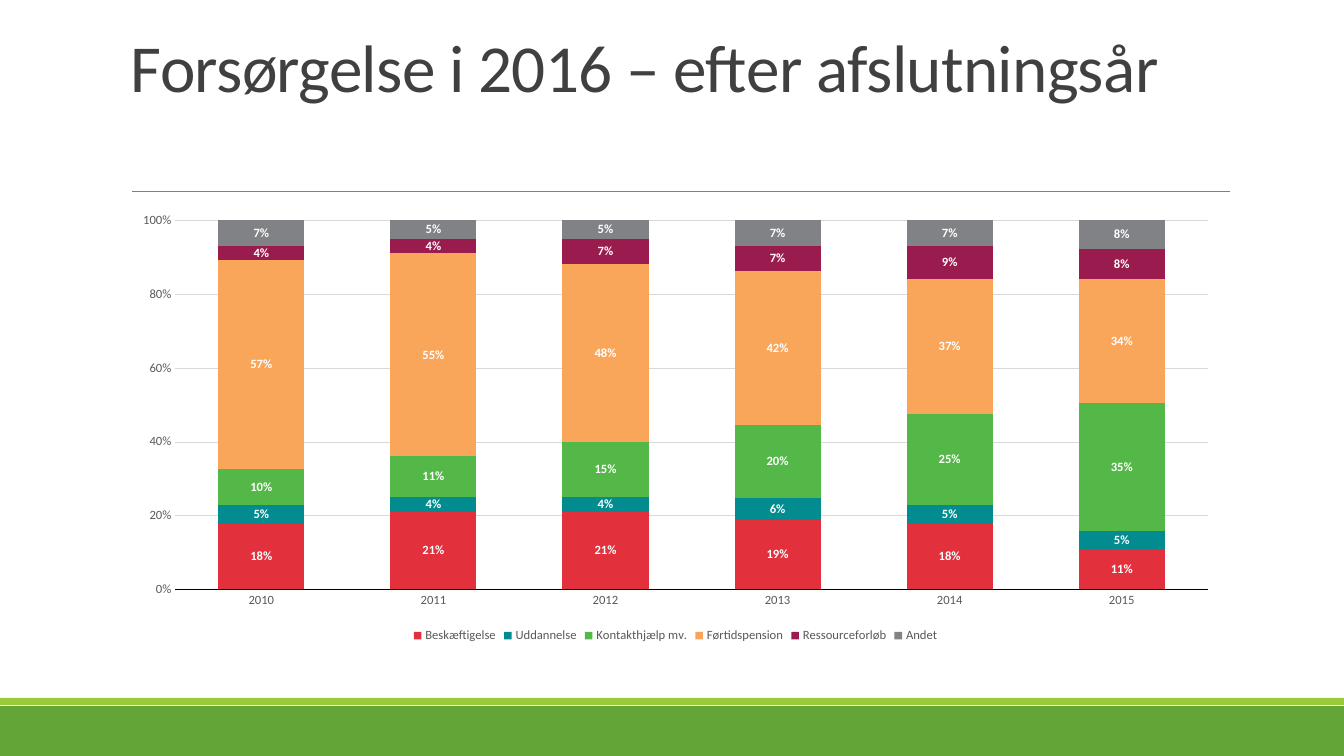
from lxml import etree
from pptx import Presentation
from pptx import util as u
from pptx.chart.data import CategoryChartData
from pptx.dml.color import RGBColor
from pptx.enum import chart as ch, shapes, text
from pptx.oxml.ns import qn

COLOURS = {
    "title": "404040", "rule": "808080", "band": "63A537", "stripe": "99CB38",
    "label": "595959", "grid": "D9D9D9", "axis": "000000", "white": "FFFFFF",
}
YEARS = ["2010", "2011", "2012", "2013", "2014", "2015"]
SUPPORT = [
    ("Beskæftigelse", "E3303D", (0.18, 0.21, 0.21, 0.19, 0.18, 0.11)),
    ("Uddannelse", "028C8F", (0.05, 0.04, 0.04, 0.06, 0.05, 0.05)),
    ("Kontakthjælp mv.", "54B848", (0.10, 0.11, 0.15, 0.20, 0.25, 0.35)),
    ("Førtidspension", "F9A65B", (0.57, 0.55, 0.48, 0.42, 0.37, 0.34)),
    ("Ressourceforløb", "9A1C4E", (0.04, 0.04, 0.07, 0.07, 0.09, 0.08)),
    ("Andet", "808285", (0.07, 0.05, 0.05, 0.07, 0.07, 0.08)),
]


def px(*lengths):
    return [u.Emu(round(length * 914400 / 100.8)) for length in lengths]


def rgb(name):
    return RGBColor.from_string(COLOURS.get(name, name))


class SlideBuilder:
    """Draws styled elements on the current slide."""

    font = "Calibri"

    def __init__(self, slide):
        self.slide = slide

    def style(self, font, size, colour, bold=False):
        font.name = self.font
        font.size = u.Pt(size)
        font.bold = bold
        font.color.rgb = rgb(colour)

    def band(self, box, colour):
        band = self.slide.shapes.add_shape(shapes.MSO_SHAPE.RECTANGLE, *px(*box))
        band.shadow.inherit = False
        band.fill.solid()
        band.fill.fore_color.rgb = rgb(colour)
        band.line.fill.background()

    def rule(self, ends, colour, width):
        rule = self.slide.shapes.add_connector(shapes.MSO_CONNECTOR.STRAIGHT, *px(*ends))
        rule.line.color.rgb = rgb(colour)
        rule.line.width = u.Pt(width)
        etree.SubElement(rule._element.spPr, qn("a:effectLst"))

    def title(self, box, wording):
        frame = self.slide.shapes.add_textbox(*px(*box)).text_frame
        frame.word_wrap = True
        frame.vertical_anchor = text.MSO_ANCHOR.TOP
        frame.margin_left, frame.margin_top = px(10, 7)
        heading = frame.paragraphs[0]
        heading.line_spacing = 0.85
        run = heading.add_run()
        run.text = wording
        self.style(run.font, 48, "title")
        run.font._element.set("spc", "-50")

    def stacked_chart(self, box, categories, groups):
        data = CategoryChartData(number_format="0%")
        data.categories = categories
        for name, _, shares in groups:
            data.add_series(name, shares)
        chart = self.slide.shapes.add_chart(
            ch.XL_CHART_TYPE.COLUMN_STACKED_100, *px(*box), data).chart
        chart.has_title = False
        self.style(chart.font, 10, "axis")
        chart.has_legend = True
        chart.legend.position = ch.XL_LEGEND_POSITION.BOTTOM
        chart.legend.include_in_layout = False
        self.style(chart.legend.font, 9, "label")

        plot = chart.plots[0]
        plot.gap_width = plot.overlap = 100
        plot.vary_by_categories = False
        for series, (_, colour, _) in zip(plot.series, groups):
            series.format.fill.solid()
            series.format.fill.fore_color.rgb = rgb(colour)
            labels = series.data_labels
            labels.show_value = True
            labels.number_format = "0%"
            labels.number_format_is_linked = False
            labels.position = ch.XL_LABEL_POSITION.CENTER
            self.style(labels.font, 9, "white", bold=True)

        years, share = chart.category_axis, chart.value_axis
        for axis in (years, share):
            axis.major_tick_mark = axis.minor_tick_mark = ch.XL_TICK_MARK.NONE
            self.style(axis.tick_labels.font, 9, "label")
        share.minimum_scale, share.maximum_scale, share.major_unit = 0, 1, 0.2
        share.tick_labels.number_format = "0%"
        share.tick_labels.number_format_is_linked = False
        share.format.line.fill.background()
        for line, colour in ((years.format.line, "axis"),
                             (share.major_gridlines.format.line, "grid")):
            line.color.rgb = rgb(colour)
            line.width = u.Pt(0.1)


def main():
    deck = Presentation()
    deck.slide_width, deck.slide_height = px(1344, 756)
    page = SlideBuilder(deck.slides.add_slide(deck.slide_layouts[6]))
    page.band((0, 706, 1344, 50), "band")
    page.band((0, 698, 1344, 7), "stripe")
    page.rule((132, 191, 1230, 191), "rule", 0.5)
    page.title((121, 31, 1109, 160), "Forsørgelse i 2016 – efter afslutningsår")
    page.stacked_chart((121, 204, 1109, 443), YEARS, SUPPORT)
    deck.save("out.pptx")


if __name__ == "__main__":
    main()
